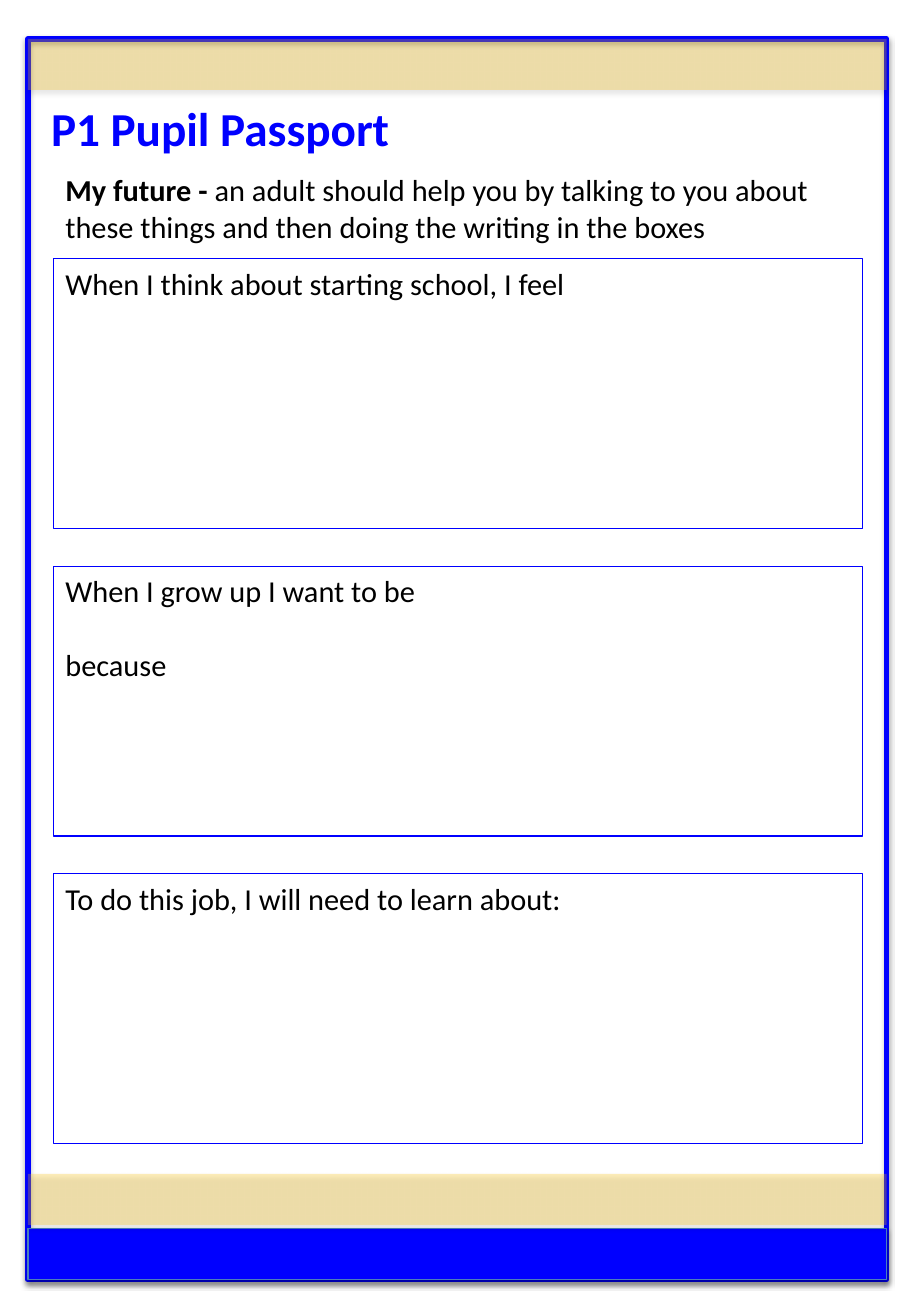
from dataclasses import dataclass
from typing import Optional

from lxml.etree import SubElement
from pptx import Presentation
from pptx.dml.color import RGBColor
from pptx.enum.shapes import MSO_SHAPE as Shape
from pptx.enum.text import MSO_ANCHOR as Anchor, MSO_AUTO_SIZE as Fit, PP_ALIGN as Align
from pptx.oxml.ns import qn
from pptx.shapes.autoshape import Shape as Box
from pptx.slide import Slide
from pptx.text.text import TextFrame, _Paragraph as Para
from pptx.util import Inches, Pt

BLUE = RGBColor(0x00, 0x00, 0xFF)
STEEL = RGBColor(0x4B, 0x7E, 0xBC)
GOLD = RGBColor(0xFE, 0xC3, 0x09)
BLACK = RGBColor(0x00, 0x00, 0x00)
FONT = "Calibri"

LEFT, WIDTH = 0.23, 7.07
BAND = 0.42
BOX_LEFT, BOX_TOP, BOX_WIDTH, BOX_HEIGHT = 0.44, 2.13, 6.66, 2.22
STEP = 2.53


@dataclass
class Panel:
    top: float
    height: float
    fill: Optional[RGBColor] = None
    line: Optional[RGBColor] = None
    weight: float = 0.75
    alpha: int = 100


PANELS = [
    Panel(0.32, 10.21, line=BLUE, weight=3.25),
    Panel(0.32, BAND, fill=GOLD, alpha=28),
    Panel(10.11, BAND, fill=BLUE, line=STEEL),
    Panel(9.66, BAND, fill=GOLD, alpha=28),
]

PROMPTS = [
    ["When I think about starting school, I feel"],
    ["When I grow up I want to be", "because"],
    ["To do this job, I will need to learn about:"],
]


def add_rect(slide: Slide, left: float, top: float, width: float, height: float,
             line: Optional[RGBColor], weight: float) -> Box:
    rect = slide.shapes.add_shape(Shape.RECTANGLE, Inches(left), Inches(top),
                                  Inches(width), Inches(height))
    rect.shadow.inherit = False
    rect.fill.background()
    if line is None:
        rect.line.fill.background()
    else:
        rect.line.color.rgb = line
        rect.line.width = Pt(weight)
    return rect


def add_shadow(rect: Box) -> None:
    """Put a soft black shadow just below the shape."""
    effects = rect._element.spPr.find(qn("a:effectLst"))
    outer = SubElement(effects, qn("a:outerShdw"), blurRad=str(Pt(3.1)),
                       dist=str(Pt(1.8)), dir="5400000", rotWithShape="0")
    color = SubElement(outer, qn("a:srgbClr"), val="000000")
    SubElement(color, qn("a:alpha"), val="35000")


def add_panel(slide: Slide, panel: Panel) -> None:
    rect = add_rect(slide, LEFT, panel.top, WIDTH, panel.height, panel.line, panel.weight)
    if panel.fill is not None:
        rect.fill.solid()
        rect.fill.fore_color.rgb = panel.fill
        if panel.alpha < 100:
            color = rect._element.spPr.find(qn("a:solidFill"))[0]
            SubElement(color, qn("a:alpha"), val=str(panel.alpha * 1000))
    add_shadow(rect)


def set_frame(frame: TextFrame, fit: Fit = Fit.NONE) -> None:
    frame.word_wrap = True
    frame.auto_size = fit
    frame.vertical_anchor = Anchor.TOP


def add_run(para: Para, text: str, size: float = 18, color: RGBColor = BLACK,
            bold: bool = False) -> None:
    para.alignment = Align.LEFT
    run = para.add_run()
    run.text = text
    run.font.name = FONT
    run.font.size = Pt(size)
    run.font.bold = bold
    run.font.color.rgb = color


def add_title(slide: Slide) -> None:
    title = slide.shapes.title
    title.left, title.top = Inches(LEFT), Inches(0.77)
    title.width, title.height = Inches(WIDTH), Inches(0.57)
    frame = title.text_frame
    set_frame(frame, Fit.SHAPE_TO_FIT_TEXT)
    frame.margin_left = Inches(0.19)
    add_run(frame.paragraphs[0], "P1 Pupil Passport", 28, BLUE, True)


def add_intro(slide: Slide) -> None:
    intro = slide.shapes.add_textbox(Inches(BOX_LEFT), Inches(1.36), Inches(6.86), Inches(0.71))
    set_frame(intro.text_frame, Fit.SHAPE_TO_FIT_TEXT)
    para = intro.text_frame.paragraphs[0]
    add_run(para, "My future - ", bold=True)
    add_run(para, "an adult should help you by talking to you about these things "
                  "and then doing the writing in the boxes")


def add_prompt(slide: Slide, top: float, lines: list[str]) -> None:
    rect = add_rect(slide, BOX_LEFT, top, BOX_WIDTH, BOX_HEIGHT, BLUE, 0.75)
    frame = rect.text_frame
    set_frame(frame)
    for i, text in enumerate(lines):
        para = frame.add_paragraph() if i else frame.paragraphs[0]
        if i:
            para.space_before = Pt(22)
        add_run(para, text)


def main() -> None:
    deck = Presentation()
    deck.slide_width, deck.slide_height = Inches(7.5), Inches(10.83)
    slide = deck.slides.add_slide(deck.slide_layouts[5])
    for panel in PANELS:
        add_panel(slide, panel)
    add_title(slide)
    add_intro(slide)
    for i, lines in enumerate(PROMPTS):
        add_prompt(slide, BOX_TOP + i * STEP, lines)
    deck.save("out.pptx")


if __name__ == "__main__":
    main()
